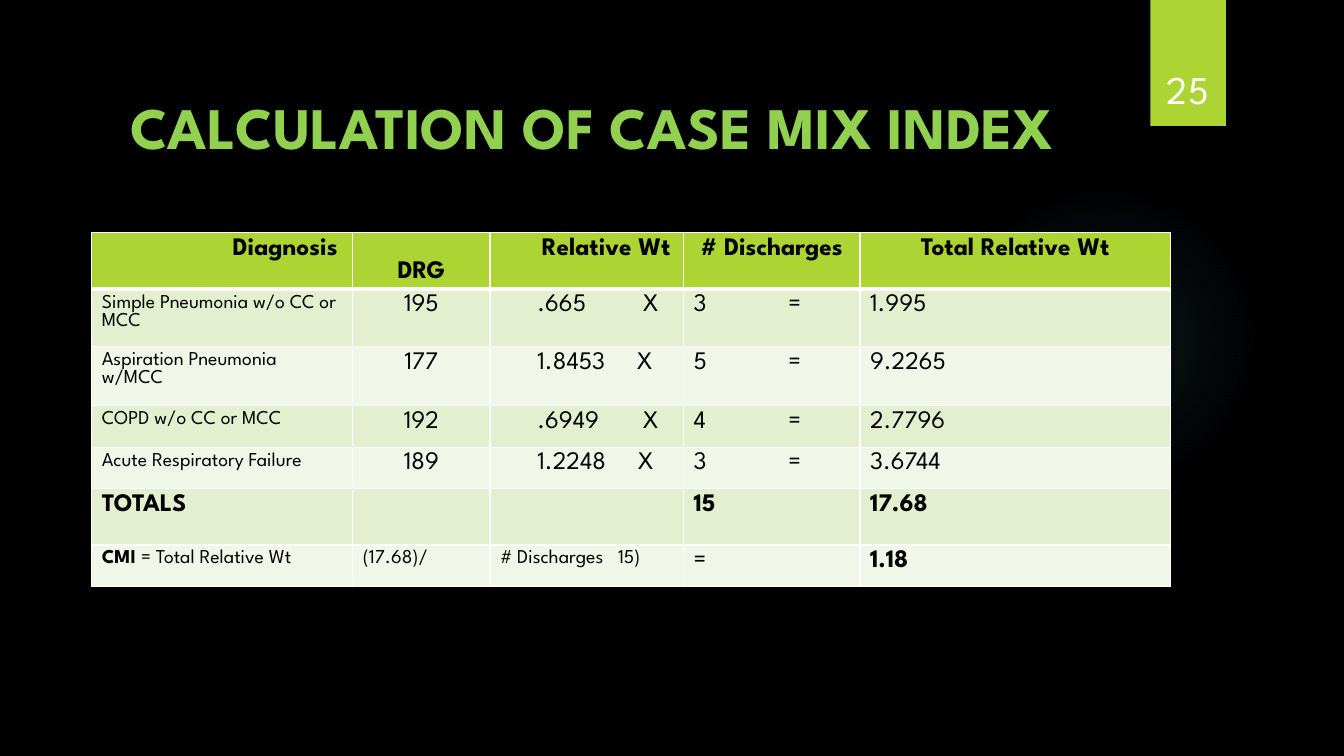
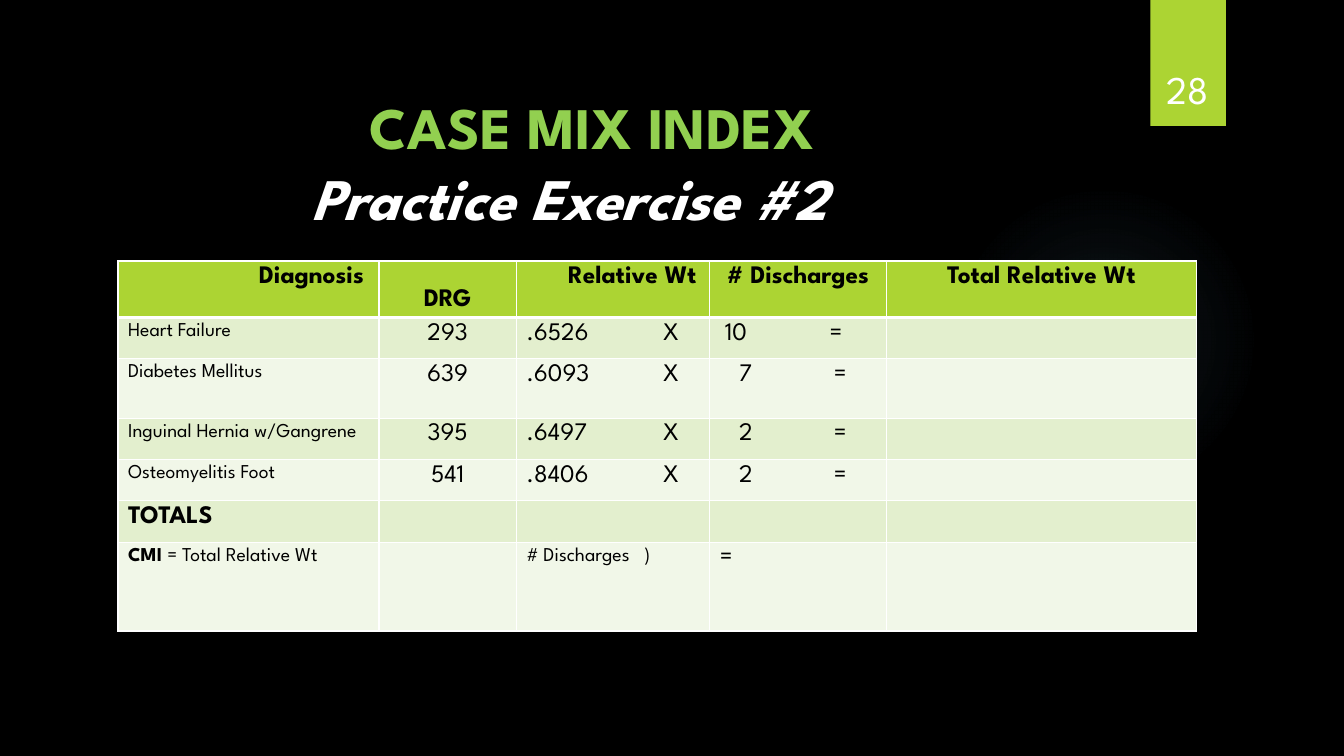
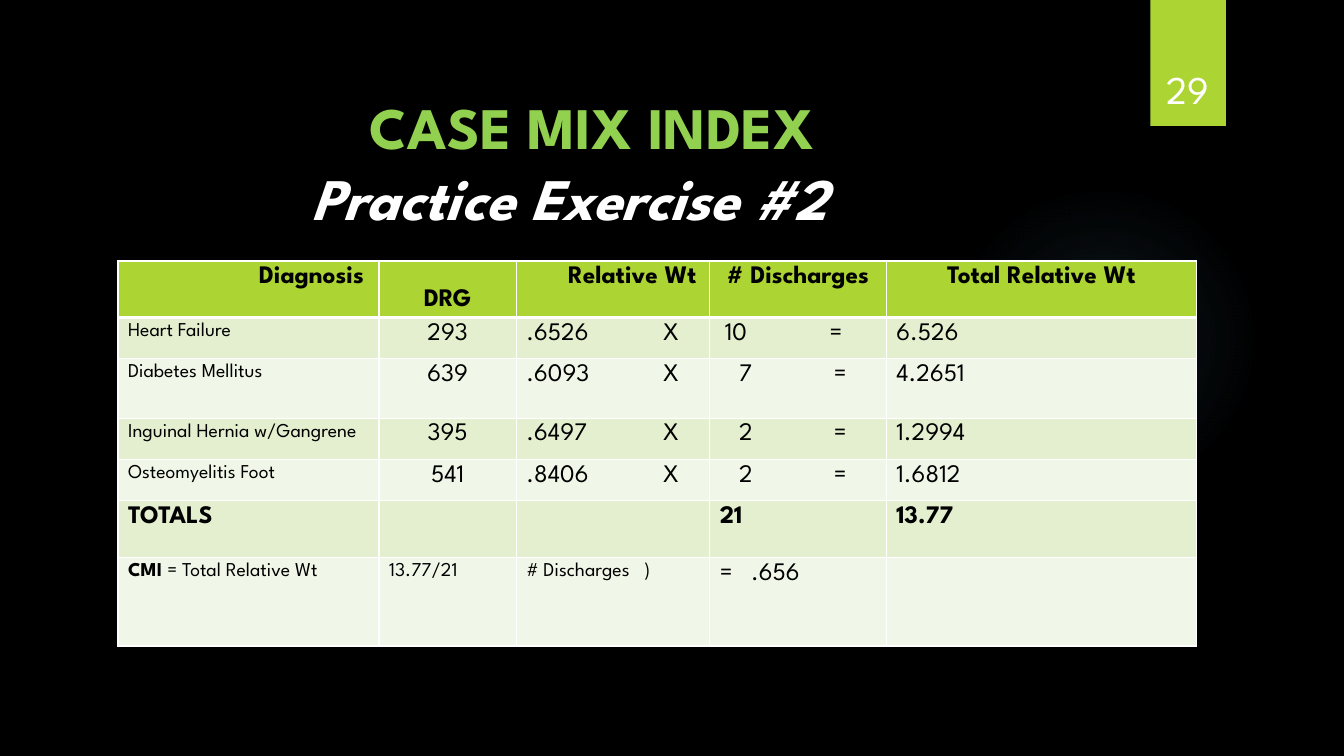
import pptx
import pptx.dml.color
import pptx.enum.shapes
import pptx.enum.text
import pptx.oxml
import pptx.oxml.ns
import pptx.util
from pptx.util import Inches

ALIGN = pptx.enum.text.PP_ALIGN
ANCHOR = pptx.enum.text.MSO_ANCHOR
SHAPE = pptx.enum.shapes.MSO_SHAPE
NAMESPACE = pptx.oxml.ns.nsdecls("a")


def color(value):
    return pptx.dml.color.RGBColor.from_string(value)


def set_values(target, values):
    for name, value in values.items():
        setattr(target, name, value)


def span(text, size=18, bold=False, italic=False, fill="000000"):
    return {"text": text, "fill": fill,
            "font": {"size": pptx.util.Pt(size), "bold": bold, "italic": italic}}


def cell(text="", size=18, bold=False, tabs=(), **layout):
    spans = [span(text, size, bold)] if text else []
    return {"spans": spans, "tabs": tabs, "layout": layout}


def diagnosis_row(name, group, weight, weight_tabs, count, count_tabs, total):
    return [cell(name, 14), cell(group, align=ALIGN.CENTER),
            cell(weight, tabs=weight_tabs), cell(count, tabs=count_tabs), cell(total)]


def totals_row(count, total):
    return [cell("TOTALS", bold=True), cell(), cell(),
            cell(count, bold=True), cell(total, bold=True)]


def index_row(division, discharges, result, total):
    label = {"spans": [span("CMI ", 14, True), span("= Total Relative Wt", 14)],
             "tabs": (), "layout": {}}
    return [label, cell(division, 14), cell(discharges, 14, tabs=(1.17,)),
            cell(result, tabs=(0.31,)), cell(total, bold=True)]


class SlideBuilder:
    FONT = "League Spartan"
    ACCENT = "ACD433"
    TITLE = "92D050"
    WHITE = "FFFFFF"
    GLOW = "7AC4F0"
    BANDS = ("F1F7E8", "E3EFCE")
    COLUMNS = (2.59, 1.36, 1.92, 1.75, 3.08)
    HEADER = [
        cell("Diagnosis", bold=True, align=ALIGN.RIGHT, right=0.15),
        cell("DRG", bold=True, align=ALIGN.CENTER, anchor=ANCHOR.BOTTOM),
        cell("Relative Wt", bold=True, align=ALIGN.RIGHT, right=0.13),
        cell("# Discharges", bold=True, align=ALIGN.CENTER),
        cell("Total Relative Wt", bold=True, align=ALIGN.CENTER),
    ]

    def __init__(self, deck):
        self.deck = deck
        self.slide = None

    def new_slide(self, number):
        self.slide = self.deck.slides.add_slide(self.deck.slide_layouts[6])
        background = self.slide.background.fill
        background.solid()
        background.fore_color.rgb = color("000000")
        self.glow()
        self.number_band(number)

    def shape(self, kind, left, top, width, height):
        shape = self.slide.shapes.add_shape(
            kind, Inches(left), Inches(top), Inches(width), Inches(height))
        shape.shadow.inherit = False
        shape.line.fill.background()
        return shape

    def glow(self):
        ellipse = self.shape(SHAPE.OVAL, 9.41, 1.83, 3.08, 3.08)
        stops = "".join(
            f'<a:gs pos="{place * 1000}"><a:srgbClr val="{self.GLOW}">'
            f'<a:alpha val="{alpha * 1000}"/></a:srgbClr></a:gs>'
            for place, alpha in ((0, 7), (36, 6), (69, 0)))
        gradient = pptx.oxml.parse_xml(
            f'<a:gradFill {NAMESPACE} rotWithShape="1"><a:gsLst>{stops}</a:gsLst>'
            '<a:path path="circle"><a:fillToRect l="50000" t="50000" r="50000" b="50000"/>'
            '</a:path></a:gradFill>')
        properties = ellipse._element.spPr
        properties.find(pptx.oxml.ns.qn("a:prstGeom")).addnext(gradient)

    def number_band(self, number):
        band = self.shape(SHAPE.RECTANGLE, 11.41, 0, 0.75, 1.25)
        band.fill.solid()
        band.fill.fore_color.rgb = color(self.ACCENT)
        effects = band._element.spPr.find(pptx.oxml.ns.qn("a:effectLst"))
        effects.append(pptx.oxml.parse_xml(
            f'<a:outerShdw {NAMESPACE} blurRad="38100" dist="25400" dir="5400000">'
            '<a:srgbClr val="000000"><a:alpha val="45000"/></a:srgbClr></a:outerShdw>'))
        frame = self.text_box(11.32, 0.32, 0.92, 0.84, ANCHOR.BOTTOM)
        self.add_spans(frame.paragraphs[0], [span(str(number), 28, fill=self.WHITE)],
                       ALIGN.CENTER)

    def text_box(self, left, top, width, height, anchor=ANCHOR.TOP):
        box = self.slide.shapes.add_textbox(
            Inches(left), Inches(top), Inches(width), Inches(height))
        set_values(box.text_frame, {"word_wrap": True, "vertical_anchor": anchor})
        return box.text_frame

    def add_spans(self, para, spans, align=ALIGN.LEFT, tabs=()):
        para.alignment = align
        if tabs:
            stops = "".join(f'<a:tab pos="{Inches(stop)}" algn="l"/>' for stop in tabs)
            para._p.get_or_add_pPr().append(
                pptx.oxml.parse_xml(f"<a:tabLst {NAMESPACE}>{stops}</a:tabLst>"))
        for part in spans:
            run = para.add_run()
            run.text = part["text"]
            set_values(run.font, {"name": self.FONT, **part["font"]})
            run.font.color.rgb = color(part["fill"])

    def title(self, heading, subtitle=None):
        frame = self.text_box(0.3, 0.84, 10.7, 1.63 if subtitle else 0.98)
        para = frame.paragraphs[0]
        para.line_spacing = pptx.util.Pt(51)
        para._p.get_or_add_pPr().set("marL", str(Inches(0.45)))
        self.add_spans(para, [span(heading, 42, True, fill=self.TITLE)], ALIGN.CENTER)
        if subtitle:
            para = frame.add_paragraph()
            para.line_spacing = pptx.util.Pt(51)
            self.add_spans(para, [span(subtitle, 42, True, True, self.WHITE)], ALIGN.CENTER)

    def table(self, left, top, heights, rows):
        rows = [self.HEADER] + rows
        table = self.slide.shapes.add_table(
            len(rows), len(self.COLUMNS), Inches(left), Inches(top),
            Inches(sum(self.COLUMNS)), Inches(sum(heights))).table
        set_values(table, {"first_row": False, "horz_banding": False})
        for column, width in zip(table.columns, self.COLUMNS):
            column.width = Inches(width)
        for row_index, (row, height) in enumerate(zip(rows, heights)):
            table.rows[row_index].height = Inches(height)
            for column_index, content in enumerate(row):
                self.fill_cell(table.cell(row_index, column_index), row_index, content)

    def fill_cell(self, target, row_index, content):
        layout = content["layout"]
        set_values(target, {
            "vertical_anchor": layout.get("anchor", ANCHOR.TOP),
            "margin_right": Inches(layout.get("right", 0.1)),
        })
        widths = {"lnL": 1, "lnR": 1, "lnT": 3 if row_index == 1 else 1,
                  "lnB": 3 if row_index == 0 else 1}
        properties = target._tc.get_or_add_tcPr()
        for side, width in widths.items():
            properties.append(pptx.oxml.parse_xml(
                f'<a:{side} {NAMESPACE} w="{pptx.util.Pt(width)}"><a:solidFill>'
                f'<a:srgbClr val="{self.WHITE}"/></a:solidFill></a:{side}>'))
        target.fill.solid()
        target.fill.fore_color.rgb = color(
            self.BANDS[row_index % 2] if row_index else self.ACCENT)
        self.add_spans(target.text_frame.paragraphs[0], content["spans"],
                       layout.get("align", ALIGN.LEFT), content["tabs"])


def calculation_rows():
    entries = (
        ("Simple Pneumonia w/o CC or MCC", "195", ".665", 1.42, "3", "1.995"),
        ("Aspiration Pneumonia w/MCC", "177", "1.8453", 1.36, "5", "9.2265"),
        ("COPD w/o CC or MCC", "192", ".6949", 1.42, "4", "2.7796"),
        ("Acute Respiratory Failure", "189", "1.2248", 1.37, "3", "3.6744"),
    )
    rows = [diagnosis_row(name, group, f"\t{weight}\tX", (0.37, times),
                          f"{count}\t=", (0.94,), total)
            for name, group, weight, times, count, total in entries]
    return rows + [totals_row("15", "17.68"),
                   index_row("(17.68)/", "# Discharges\t15)", "=", "1.18")]


def exercise_rows(totals, count_sum, weight_sum, division, result):
    entries = (
        ("Heart Failure", "293", ".6526", "10", (0.05, 1.09)),
        ("Diabetes Mellitus", "639", ".6093", "7", (0.19, 1.13)),
        ("Inguinal Hernia w/Gangrene", "395", ".6497", "2", (0.19, 1.13)),
        ("Osteomyelitis Foot", "541", ".8406", "2", (0.19, 1.13)),
    )
    rows = [diagnosis_row(name, group, f"{weight}\tX", (1.36,),
                          f"\t{count}\t=", tabs, total)
            for (name, group, weight, count, tabs), total in zip(entries, totals)]
    return rows + [totals_row(count_sum, weight_sum),
                   index_row(division, "# Discharges\t)", result, "")]


def main():
    deck = pptx.Presentation()
    set_values(deck, {"slide_width": Inches(13.33), "slide_height": Inches(7.5)})
    builder = SlideBuilder(deck)

    builder.new_slide(25)
    builder.title("CALCULATION OF CASE MIX INDEX")
    builder.table(0.91, 2.31, (0.56, 0.46, 0.59, 0.41, 0.41, 0.56, 0.41), calculation_rows())

    exercises = (
        (28, 0.41, exercise_rows([""] * 4, "", "", "", "=")),
        (29, 0.56, exercise_rows(("6.526", "4.2651", "1.2994", "1.6812"),
                                 "21", "13.77", "13.77/21", "=\t.656")),
    )
    for number, totals_height, rows in exercises:
        builder.new_slide(number)
        builder.title("CASE MIX INDEX", "Practice Exercise #2")
        builder.table(1.17, 2.59, (0.56, 0.41, 0.59, 0.41, 0.41, totals_height, 0.88), rows)

    deck.save("out.pptx")


if __name__ == "__main__":
    main()
